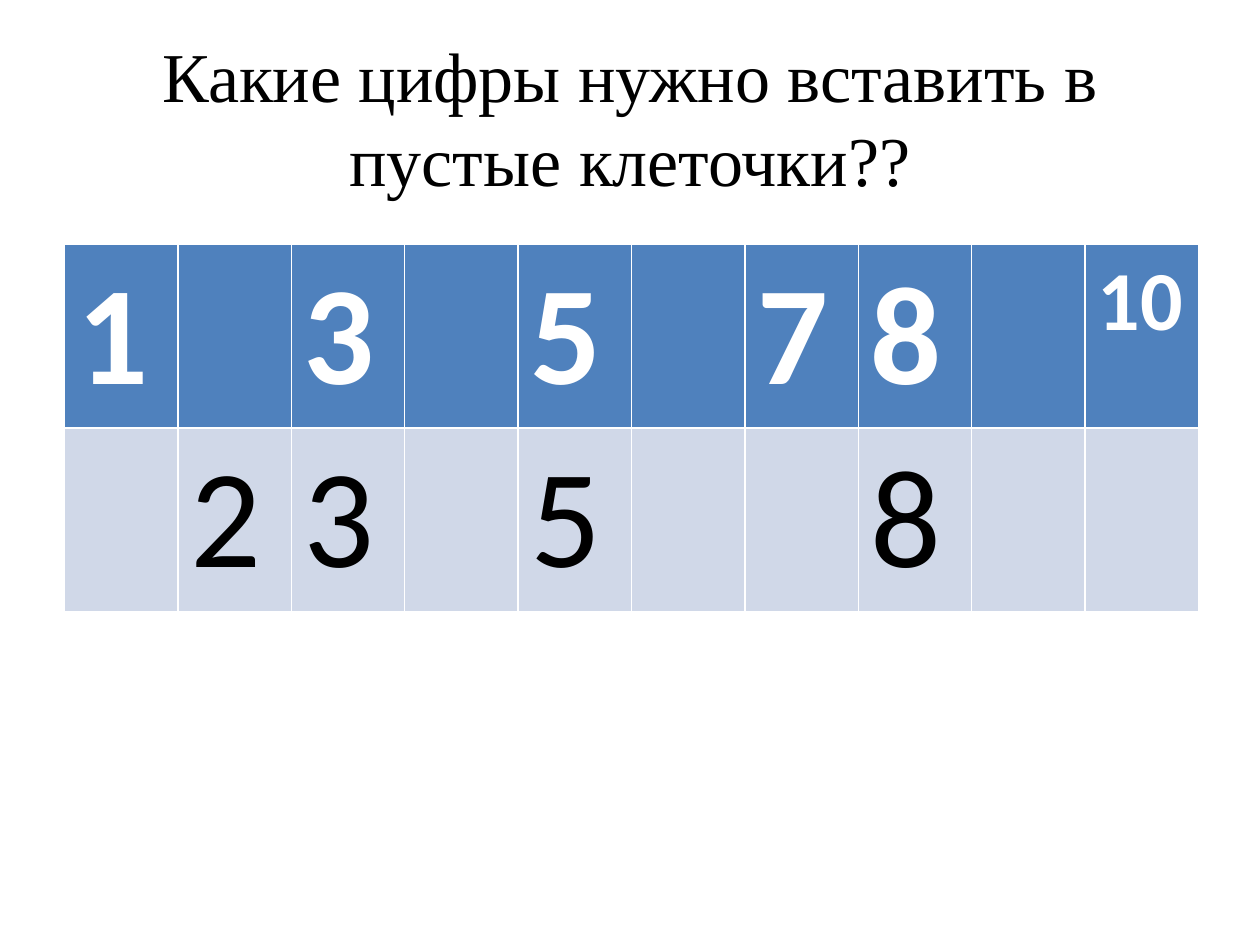
from pptx import Presentation
from pptx.dml.color import RGBColor
from pptx.enum.text import MSO_ANCHOR, PP_ALIGN
from pptx.util import Cm, Pt

HEADER = ["1", "", "3", "", "5", "", "7", "8", "", "10"]
ANSWERS = ["", "2", "3", "", "5", "", "", "8", "", ""]


def color(value):
    return RGBColor.from_string(value)


def set_font(p, name, size, value, bold=False):
    p.font.name = name
    p.font.size = Pt(size)
    p.font.bold = bold
    p.font.color.rgb = color(value)


def add_title(s, text):
    sp = s.shapes.title
    sp.left, sp.top, sp.width, sp.height = Cm(1.27), Cm(0.76), Cm(22.86), Cm(3.18)
    tf = sp.text_frame
    tf.word_wrap = True
    tf.vertical_anchor = MSO_ANCHOR.MIDDLE
    tf.margin_left = tf.margin_right = Cm(0.5)
    p = tf.paragraphs[0]
    p.text = text
    p.alignment = PP_ALIGN.CENTER
    set_font(p, "Times New Roman", 40, "000000")


def fill_row(table, row, values, fill, font_color, bold):
    table.rows[row].height = Cm(3.7)
    for col, value in enumerate(values):
        cell = table.cell(row, col)
        cell.fill.solid()
        cell.fill.fore_color.rgb = color(fill)
        if value:
            p = cell.text_frame.paragraphs[0]
            p.text = value
            set_font(p, "Calibri", 80 if len(value) == 1 else 48, font_color, bold)


def add_number_table(s):
    table = s.shapes.add_table(
        2, len(HEADER), Cm(1.3), Cm(4.93), Cm(22.86), Cm(7.4)
    ).table
    fill_row(table, 0, HEADER, "4F81BD", "FFFFFF", True)
    fill_row(table, 1, ANSWERS, "D0D8E8", "000000", False)


def main():
    prs = Presentation()
    prs.slide_width, prs.slide_height = Cm(25.4), Cm(19.05)
    s = prs.slides.add_slide(prs.slide_layouts[5])
    add_title(s, "Какие цифры нужно вставить в пустые клеточки??")
    add_number_table(s)
    prs.save("out.pptx")


if __name__ == "__main__":
    main()
